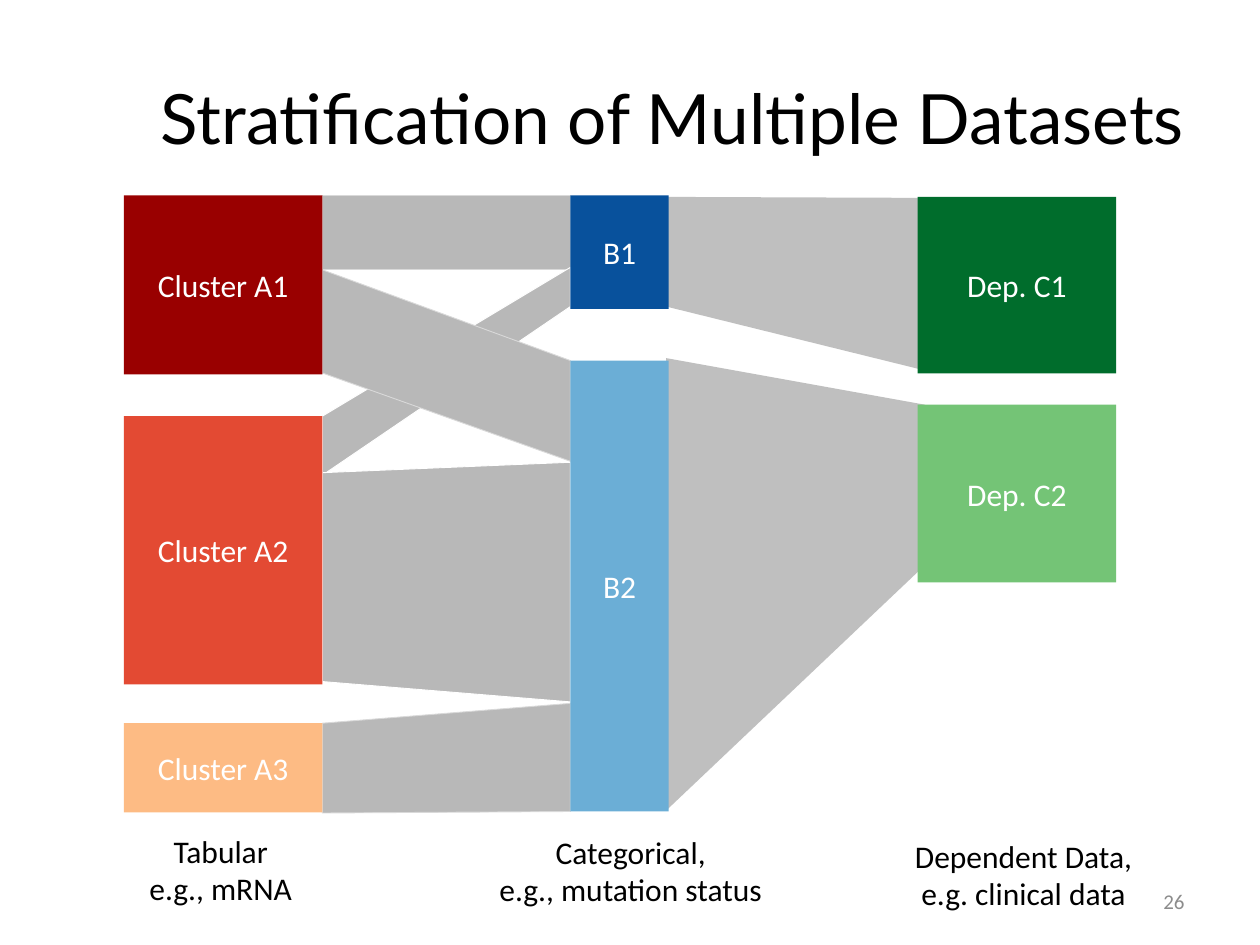
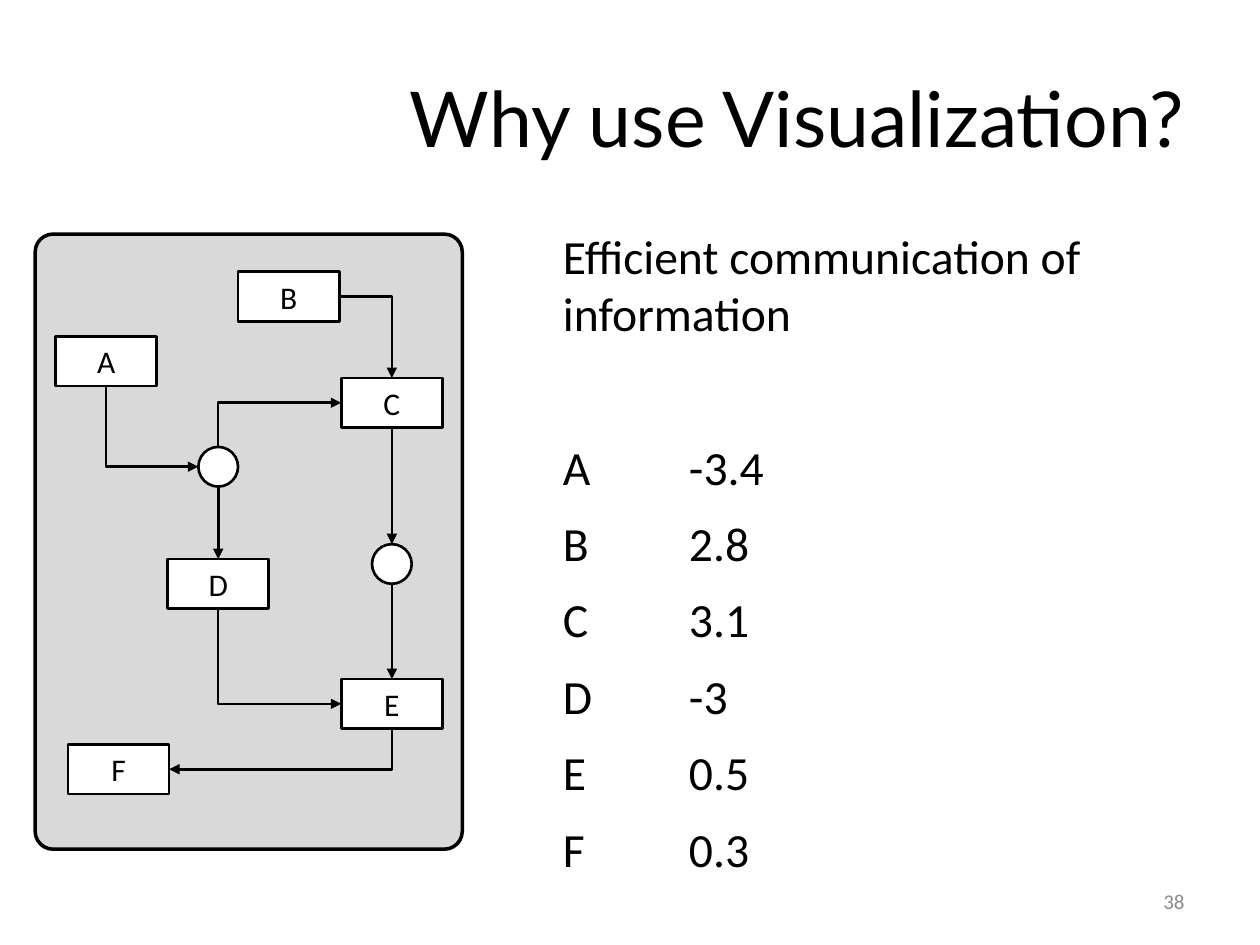
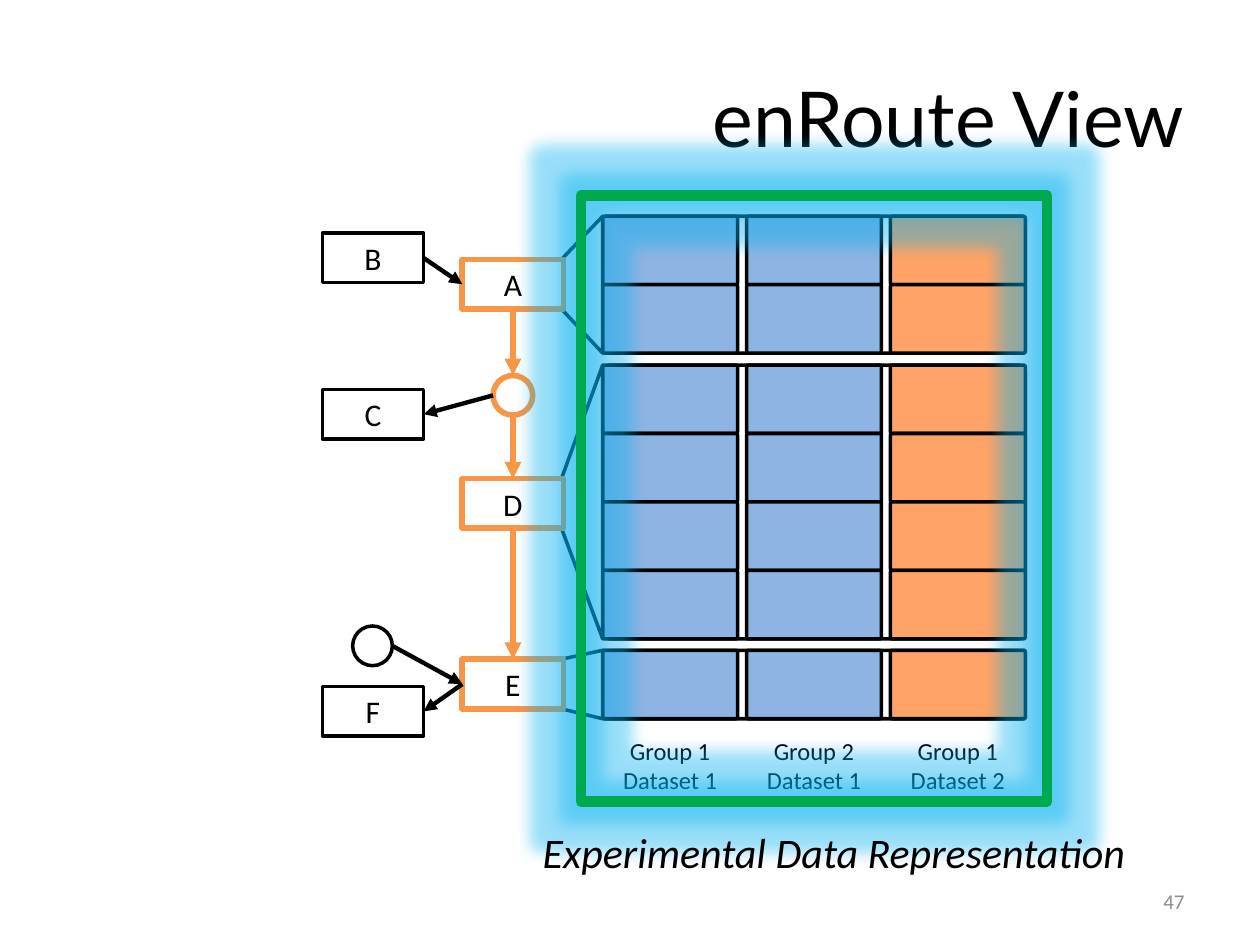
from lxml.etree import SubElement
from pptx import Presentation
from pptx.dml.color import RGBColor
from pptx.enum.shapes import MSO_CONNECTOR as Wire, MSO_SHAPE as Kind
from pptx.enum.text import MSO_ANCHOR as Anchor, MSO_AUTO_SIZE as Fit, PP_ALIGN as Align
from pptx.oxml.ns import qn
from pptx.util import Cm, Pt

HUES = {
    "black": "000000", "white": "FFFFFF", "page": "8C8C8C",
    "panel": "D9D9D9", "ribbon": "B8B8B8", "flow": "BFBFBF",
    "a1": "990000", "a2": "E34A33", "a3": "FDBB84",
    "b1": "08519C", "b2": "6BAED6", "c1": "006D2C", "c2": "74C476",
    "route": "F79646", "blue": "8EB4E3", "orange": "FFA366",
    "frame": "00A950", "glow": "00B0F0",
}
TOP, LEFT, BOTTOM, RIGHT = range(4)
NODE_W, NODE_H, RING = 2.04, 1, 0.8


def hue(name):
    return RGBColor.from_string(HUES[name])


def text(frame, lines, size=18, color="black", font="Calibri", align=Align.CENTER,
         anchor=Anchor.MIDDLE, italic=None, wrap=True):
    frame.word_wrap = wrap
    frame.auto_size = Fit.NONE
    frame.vertical_anchor = anchor
    for i, line in enumerate(lines):
        para = frame.add_paragraph() if i else frame.paragraphs[0]
        para.text = line
        para.alignment = align
        for run in para.runs:
            run.font.name = font
            run.font.size = Pt(size)
            run.font.italic = italic
            run.font.color.rgb = hue(color)


def label(slide, x, y, w, h, lines, **fmt):
    box = slide.shapes.add_textbox(Cm(x), Cm(y), Cm(w), Cm(h))
    text(box.text_frame, lines, **fmt)
    return box


def paint(shape, fill, line=None, width=1.5):
    shape.shadow.inherit = False
    if fill:
        shape.fill.solid()
        shape.fill.fore_color.rgb = hue(fill)
    else:
        shape.fill.background()
    if line:
        shape.line.color.rgb = hue(line)
        shape.line.width = Pt(width)
    else:
        shape.line.fill.background()


def block(slide, x, y, w, h, fill, line=None, width=1.5, kind=Kind.RECTANGLE,
          word=None, color="black", curve=None):
    shape = slide.shapes.add_shape(kind, Cm(x), Cm(y), Cm(w), Cm(h))
    paint(shape, fill, line, width)
    if curve is not None:
        shape.adjustments[0] = curve
    if word:
        text(shape.text_frame, [word], color=color)
    return shape


def band(slide, x1, x2, left, right, fill, line=None, width=0.5):
    """Draw a four-sided band; left and right are (top, bottom) pairs."""
    spots = [(x1, left[0]), (x2, right[0]), (x2, right[1]), (x1, left[1])]
    first, *rest = [(Cm(x), Cm(y)) for x, y in spots]
    pen = slide.shapes.build_freeform(*first, scale=1.0)
    pen.add_line_segments(rest, close=True)
    paint(pen.convert_to_shape(), fill, line, width)


def node(slide, x, y, word=None, line="black", width=1.5):
    """Draw a named box, or a ring when there is no name."""
    if word:
        return block(slide, x, y, NODE_W, NODE_H, "white", line, width, word=word)
    return block(slide, x, y, RING, RING, "white", line, width, kind=Kind.OVAL)


def link(slide, start, side, goal, port, color="black", width=1.5, elbow=False, head="tailEnd"):
    """Join two nodes; an elbow leaves its start sideways and turns once."""
    wire = slide.shapes.add_connector(Wire.ELBOW if elbow else Wire.STRAIGHT, 0, 0, 0, 0)
    wire.begin_connect(start, side)
    wire.end_connect(goal, port)
    root = wire._element
    for tag, shape, idx in (("a:stCxn", start, side), ("a:endCxn", goal, port)):
        if shape.auto_shape_type == Kind.OVAL:  # an oval has eight sites
            next(root.iter(qn(tag))).set("idx", str(idx * 2))
    if elbow:
        next(root.iter(qn("a:prstGeom"))).set("prst", "bentConnector2")
    wire.line.color.rgb = hue(color)
    wire.line.width = Pt(width)
    SubElement(wire.line._get_or_add_ln(), qn(f"a:{head}"), type="triangle")
    SubElement(root.spPr, qn("a:effectLst"))


def page(deck, title, number, size=44):
    slide = deck.slides.add_slide(deck.slide_layouts[5])
    head = slide.shapes.title
    head.left, head.top, head.width, head.height = Cm(1.27), Cm(0.76), Cm(22.86), Cm(3.18)
    text(head.text_frame, [title], size=size, font="Lato", align=Align.RIGHT)
    label(slide, 18.21, 17.65, 5.92, 1.02, [number], size=12, color="page", align=Align.RIGHT)
    return slide


def strata(slide, x, y):
    """Draw three columns of clusters with the bands that flow between them."""
    mid, last, wide, thin = 9, 16, 4, 1.98

    def flow(x1, x2, left, right, *style):
        band(slide, x + x1, x + x2, [y + t for t in left], [y + t for t in right], *style)

    flow(mid + thin - 0.05, last + 0.15, (3.28, 12.4), (4.22, 7.45), "flow")
    flow(mid + thin - 0.05, last + 0.15, (0.03, 2.24), (0.05, 3.53), "flow")
    for left, right, line in [
        ((0, 1.5), (0, 1.5), "panel"),
        ((4.45, 5.64), (1.45, 2.24), "white"),
        ((5.59, 9.8), (5.38, 10.21), "white"),
        ((10.64, 12.45), (10.24, 12.42), "panel"),
        ((1.5, 3.58), (3.33, 5.36), "panel"),
    ]:
        flow(wide, mid, left, right, "ribbon", line)
    for left, top, w, h, fill, word in [
        (0, 0, wide, 3.61, "a1", "Cluster A1"),
        (0, 4.45, wide, 5.41, "a2", "Cluster A2"),
        (0, 10.64, wide, 1.8, "a3", "Cluster A3"),
        (mid, 0, thin, 2.29, "b1", "B1"),
        (mid, 3.33, thin, 9.09, "b2", "B2"),
        (last, 0.03, wide, 3.56, "c1", "Dep. C1"),
        (last, 4.22, wide, 3.58, "c2", "Dep. C2"),
    ]:
        block(slide, x + left, y + top, w, h, fill, word=word, color="white")
    for left, top, w, lines in [
        (0.25, 12.7, 3.4, ["Tabular\ve.g., mRNA"]),
        (7.28, 12.72, 5.87, ["Categorical,", "e.g., mutation status"]),
        (15.66, 12.8, 4.95, ["Dependent Data,\ve.g. clinical data"]),
    ]:
        label(slide, x + left, y + top, w, 1.8, lines, anchor=Anchor.TOP, wrap=False)


def network(slide, x, y, w, h):
    block(slide, x, y, w, h, "panel", "black", 2, kind=Kind.ROUNDED_RECTANGLE, curve=0.042)
    spots = {"A": (0.41, 2.06), "B": (4.09, 0.76), "C": (6.17, 2.9),
             "D": (2.67, 6.55), "E": (6.17, 8.97), "F": (0.66, 10.29)}
    a, b, c, d, e, f = [node(slide, x + dx, y + dy, word) for word, (dx, dy) in spots.items()]
    fork = node(slide, x + 3.29, y + 4.29)
    ring = node(slide, x + 6.79, y + 6.25)
    for start, goal in ((c, ring), (ring, e), (fork, d)):
        link(slide, start, BOTTOM, goal, TOP)
    for start, side, goal, port, head in [
        (b, RIGHT, c, TOP, "tailEnd"),
        (fork, LEFT, a, BOTTOM, "headEnd"),
        (c, LEFT, fork, TOP, "headEnd"),
        (e, LEFT, d, BOTTOM, "headEnd"),
        (f, RIGHT, e, BOTTOM, "headEnd"),
    ]:
        link(slide, start, side, goal, port, elbow=True, head=head)


def values(slide, x, y, w, h):
    rows = ["A\t-3.4", "B\t2.8", "C\t3.1", "D\t-3", "E\t0.5", "F\t0.3"]
    box = label(slide, x, y, w, h, ["Efficient communication of information", *rows],
                size=27.2, align=Align.LEFT, anchor=Anchor.TOP)
    for i, para in enumerate(box.text_frame.paragraphs):
        para.space_after = Pt(6)
        if i:
            para.space_before = Pt(49 if i == 1 else 5)
            tabs = SubElement(para._p.get_or_add_pPr(), qn("a:tabLst"))
            SubElement(tabs, qn("a:tab"), pos=str(Cm(2.54)), algn="l")


def matrix(slide, x, y):
    """Draw the grouped cells, and the wedges that tie each group to its node."""
    cell, step, row = 2.72, 2.9, 1.38
    groups = [(0, 2, 0.87), (3, 4, 5.29), (8.75, 1, 8.93)]
    cols = [("blue", "Group 1", "Dataset 1"), ("blue", "Group 2", "Dataset 1"),
            ("orange", "Group 1", "Dataset 2")]
    style = dict(line="black", width=2, kind=Kind.ROUNDED_RECTANGLE, curve=0.025)
    for top, count, tap in groups:
        high = count * row
        block(slide, x, y + top, 2 * step + cell, high, "white", **style)
        for i, (fill, *_) in enumerate(cols):
            for j in range(count):
                block(slide, x + i * step, y + top + j * row, cell, row, fill, **style)
        band(slide, x - 0.83, x, (y + tap, y + tap + NODE_H), (y + top, y + top + high),
             "white", "black", 2)
    for i, (_, *lines) in enumerate(cols):
        label(slide, x + i * step, y + 10.35, cell, 1.45, lines, size=14,
              anchor=Anchor.TOP, wrap=False)


def route(slide, x, y):
    main = dict(line="route", width=3.2)
    b, c, f = [node(slide, x, y + dy, word, width=2)
               for word, dy in (("B", 0), ("C", 3.15), ("F", 9.14))]
    ring = node(slide, x + 0.61, y + 7.92, width=2)
    a, d, e = [node(slide, x + 2.82, y + dy, word, **main)
               for word, dy in (("A", 0.53), ("D", 4.95), ("E", 8.59))]
    fork = node(slide, x + 3.44, y + 2.87, **main)
    for start, goal in ((a, fork), (fork, d), (d, e)):
        link(slide, start, BOTTOM, goal, TOP, color="route", width=3.2)
    for start, side, goal, port in [(b, RIGHT, a, LEFT), (fork, LEFT, c, RIGHT),
                                    (ring, RIGHT, e, LEFT), (e, LEFT, f, RIGHT)]:
        link(slide, start, side, goal, port, width=2.5)


def halo(slide, x, y, w, h):
    """Frame a region in green with a soft blue glow."""
    frame = block(slide, x, y, w, h, None, "frame", 6)
    effects = frame._element.spPr.find(qn("a:effectLst"))
    glow = SubElement(effects, qn("a:glow"), rad=str(Pt(18)))
    tint = SubElement(glow, qn("a:srgbClr"), val=HUES["glow"])
    SubElement(tint, qn("a:alpha"), val="40000")


def main():
    deck = Presentation()
    deck.slide_width, deck.slide_height = Cm(25.4), Cm(19.05)

    slide = page(deck, "Stratification of Multiple Datasets", "26", size=39.6)
    strata(slide, 2.5, 3.94)

    slide = page(deck, "Why use Visualization?", "38")
    network(slide, 0.71, 4.72, 8.61, 12.4)
    values(slide, 11.1, 4.45, 13.03, 12.57)

    slide = page(deck, "enRoute View", "47")
    matrix(slide, 12.15, 4.36)
    route(slide, 6.5, 4.7)
    halo(slide, 11.71, 3.94, 9.4, 12.22)
    label(slide, 10.69, 16.54, 12.4, 1.27, ["Experimental Data Representation"],
          size=24, italic=True, align=Align.LEFT, anchor=Anchor.TOP, wrap=False)

    deck.save("out.pptx")


if __name__ == "__main__":
    main()
